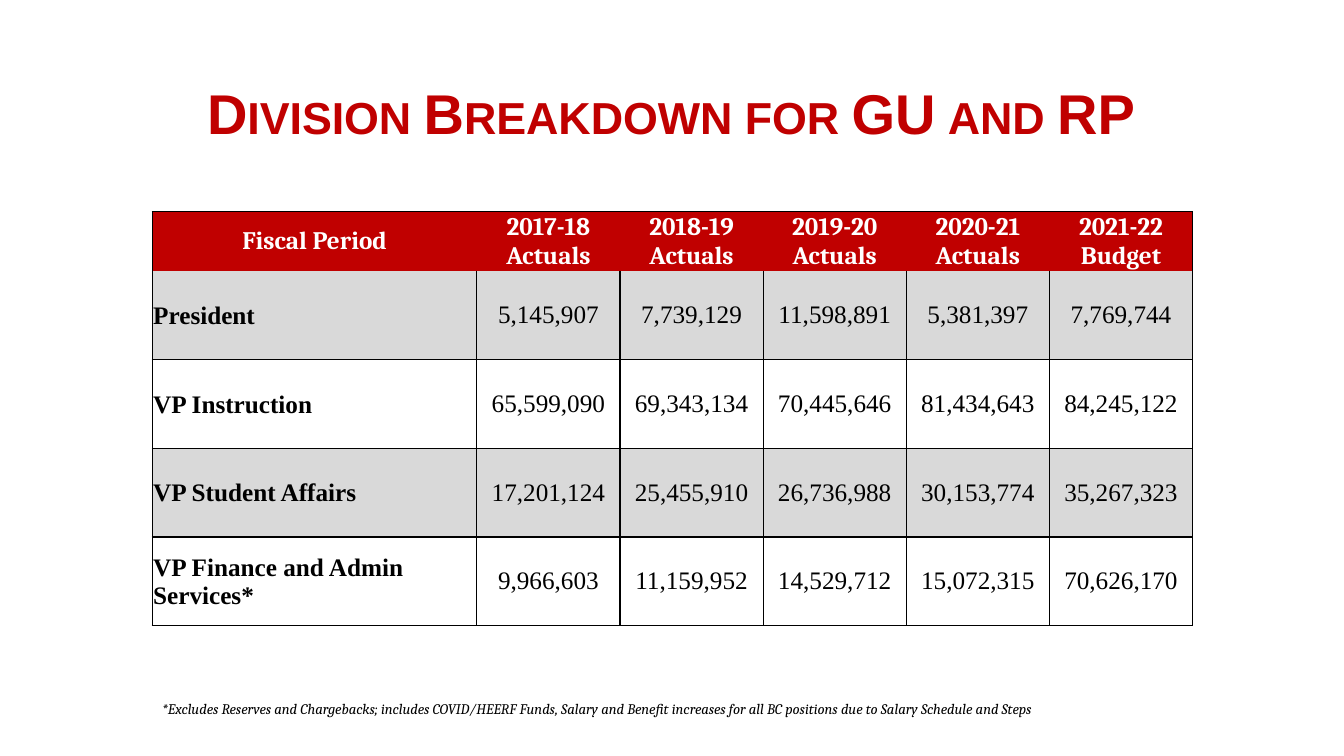
"""Build the division breakdown slide."""
from dataclasses import dataclass

from lxml.etree import SubElement
from pptx import Presentation
from pptx.dml.color import RGBColor
from pptx.enum.text import MSO_ANCHOR, MSO_AUTO_SIZE, PP_ALIGN
from pptx.oxml.ns import qn
from pptx.slide import Slide
from pptx.table import _Cell
from pptx.text.text import TextFrame
from pptx.util import Inches, Pt


@dataclass(frozen=True)
class TextStyle:
    """Look of one kind of text."""

    font: str
    size: float
    color: str
    bold: bool = False
    italic: bool = False
    small_caps: bool = False
    align: PP_ALIGN = PP_ALIGN.LEFT
    line_spacing: float = 1.0


@dataclass(frozen=True)
class Theme:
    """Colours and type styles of the slide."""

    red: str = "C00000"
    band: str = "D9D9D9"
    rule: str = "000000"
    rule_width: float = 1
    title: TextStyle = TextStyle("Arial", 40, "C00000", bold=True, small_caps=True,
                                 align=PP_ALIGN.CENTER, line_spacing=0.9)
    header: TextStyle = TextStyle("Cambria", 18, "FFFFFF", bold=True, align=PP_ALIGN.CENTER)
    division: TextStyle = TextStyle("Times New Roman", 18, "000000", bold=True)
    amount: TextStyle = TextStyle("Times New Roman", 18, "000000", align=PP_ALIGN.CENTER)
    footnote: TextStyle = TextStyle("Cambria", 10.5, "000000", italic=True)


@dataclass(frozen=True)
class TextItem:
    """A free text with its place in inches."""

    text: str
    style: TextStyle
    left: float
    top: float
    width: float
    height: float
    anchor: MSO_ANCHOR = MSO_ANCHOR.TOP
    auto_size: MSO_AUTO_SIZE = MSO_AUTO_SIZE.NONE


@dataclass(frozen=True)
class Division:
    """A division and its amounts by fiscal period."""

    name: str
    amounts: tuple[int, ...]


THEME = Theme()
TABLE_LEFT, TABLE_TOP, TABLE_WIDTH, TABLE_HEIGHT = 1.51, 2.1, 10.29, 4.15
NAME_WIDTH, AMOUNT_WIDTH = 3.22, 1.42
HEADER_HEIGHT, DIVISION_HEIGHT = 0.43, 0.88

HEADERS = ("Fiscal Period", "2017-18 Actuals", "2018-19 Actuals", "2019-20 Actuals",
           "2020-21 Actuals", "2021-22 Budget")
DIVISIONS = (
    Division("President", (5145907, 7739129, 11598891, 5381397, 7769744)),
    Division("VP Instruction", (65599090, 69343134, 70445646, 81434643, 84245122)),
    Division("VP Student Affairs", (17201124, 25455910, 26736988, 30153774, 35267323)),
    Division("VP Finance and Admin Services*", (9966603, 11159952, 14529712, 15072315, 70626170)),
)
TEXTS = (
    TextItem("Division Breakdown for GU and RP", THEME.title, 0.6, 0.43, 12.11, 1.45,
             anchor=MSO_ANCHOR.MIDDLE),
    TextItem("*Excludes Reserves and Chargebacks; includes COVID/HEERF Funds, Salary and Benefit "
             "increases for all BC positions due to Salary Schedule and Steps",
             THEME.footnote, TABLE_LEFT, 6.89, TABLE_WIDTH, 0.28,
             auto_size=MSO_AUTO_SIZE.SHAPE_TO_FIT_TEXT),
)


def write_text(frame: TextFrame, text: str, style: TextStyle) -> None:
    """Write one styled run into a text frame."""
    para = frame.paragraphs[0]
    para.alignment = style.align
    para.line_spacing = style.line_spacing
    span = para.add_run()
    span.text = text
    font = span.font
    font.name, font.size = style.font, Pt(style.size)
    font.bold, font.italic = style.bold, style.italic
    font.color.rgb = RGBColor.from_string(style.color)
    if style.small_caps:
        span._r.get_or_add_rPr().set("cap", "small")


def add_text(page: Slide, item: TextItem) -> None:
    """Add a wrapped text box."""
    box = page.shapes.add_textbox(Inches(item.left), Inches(item.top),
                                  Inches(item.width), Inches(item.height))
    frame = box.text_frame
    frame.word_wrap = True
    frame.auto_size = item.auto_size
    frame.vertical_anchor = item.anchor
    write_text(frame, item.text, item.style)


def set_borders(cell: _Cell, ruled_sides: str) -> None:
    """Rule the given sides of a cell and clear the others."""
    properties = cell._tc.get_or_add_tcPr()
    for side in "LRTB":
        line = SubElement(properties, qn(f"a:ln{side}"), w=str(Pt(THEME.rule_width)))
        if side in ruled_sides:
            fill = SubElement(line, qn("a:solidFill"))
            SubElement(fill, qn("a:srgbClr"), val=THEME.rule)
        else:
            SubElement(line, qn("a:noFill"))


def fill_cell(cell: _Cell, text: str, style: TextStyle, color: str | None,
              ruled_sides: str, inset: float) -> None:
    """Style one table cell and write its text."""
    set_borders(cell, ruled_sides)
    if color:
        cell.fill.solid()
        cell.fill.fore_color.rgb = RGBColor.from_string(color)
    else:
        cell.fill.background()
    cell.vertical_anchor = MSO_ANCHOR.MIDDLE
    cell.margin_left = cell.margin_right = cell.margin_top = Inches(inset)
    cell.margin_bottom = Inches(0)
    write_text(cell.text_frame, text, style)


def add_breakdown(page: Slide) -> None:
    """Add the table of divisions by fiscal period."""
    holder = page.shapes.add_table(len(DIVISIONS) + 1, len(HEADERS), Inches(TABLE_LEFT),
                                   Inches(TABLE_TOP), Inches(TABLE_WIDTH), Inches(TABLE_HEIGHT))
    table = holder.table
    table.first_row = table.horz_banding = False
    for index, column in enumerate(table.columns):
        column.width = Inches(AMOUNT_WIDTH if index else NAME_WIDTH)
    for index, row in enumerate(table.rows):
        row.height = Inches(DIVISION_HEIGHT if index else HEADER_HEIGHT)
    holder.height = Inches(TABLE_HEIGHT)

    outer_sides = {0: "LT", len(HEADERS) - 1: "TR"}
    for column, header in enumerate(HEADERS):
        fill_cell(table.cell(0, column), header, THEME.header, THEME.red,
                  outer_sides.get(column, "T"), 0.01)
    for row, division in enumerate(DIVISIONS, start=1):
        color = THEME.band if row % 2 else None
        sides = "LRB" if row == 1 else "LRTB"
        fill_cell(table.cell(row, 0), division.name, THEME.division, color, sides, 0.01)
        for column, amount in enumerate(division.amounts, start=1):
            fill_cell(table.cell(row, column), f"{amount:,}", THEME.amount, color, sides, 0)


def main() -> None:
    """Build and save the deck."""
    deck = Presentation()
    deck.slide_width, deck.slide_height = Inches(13.33), Inches(7.5)
    page = deck.slides.add_slide(deck.slide_layouts[6])
    title, footnote = TEXTS
    add_text(page, title)
    add_breakdown(page)
    add_text(page, footnote)
    deck.save("out.pptx")


if __name__ == "__main__":
    main()
